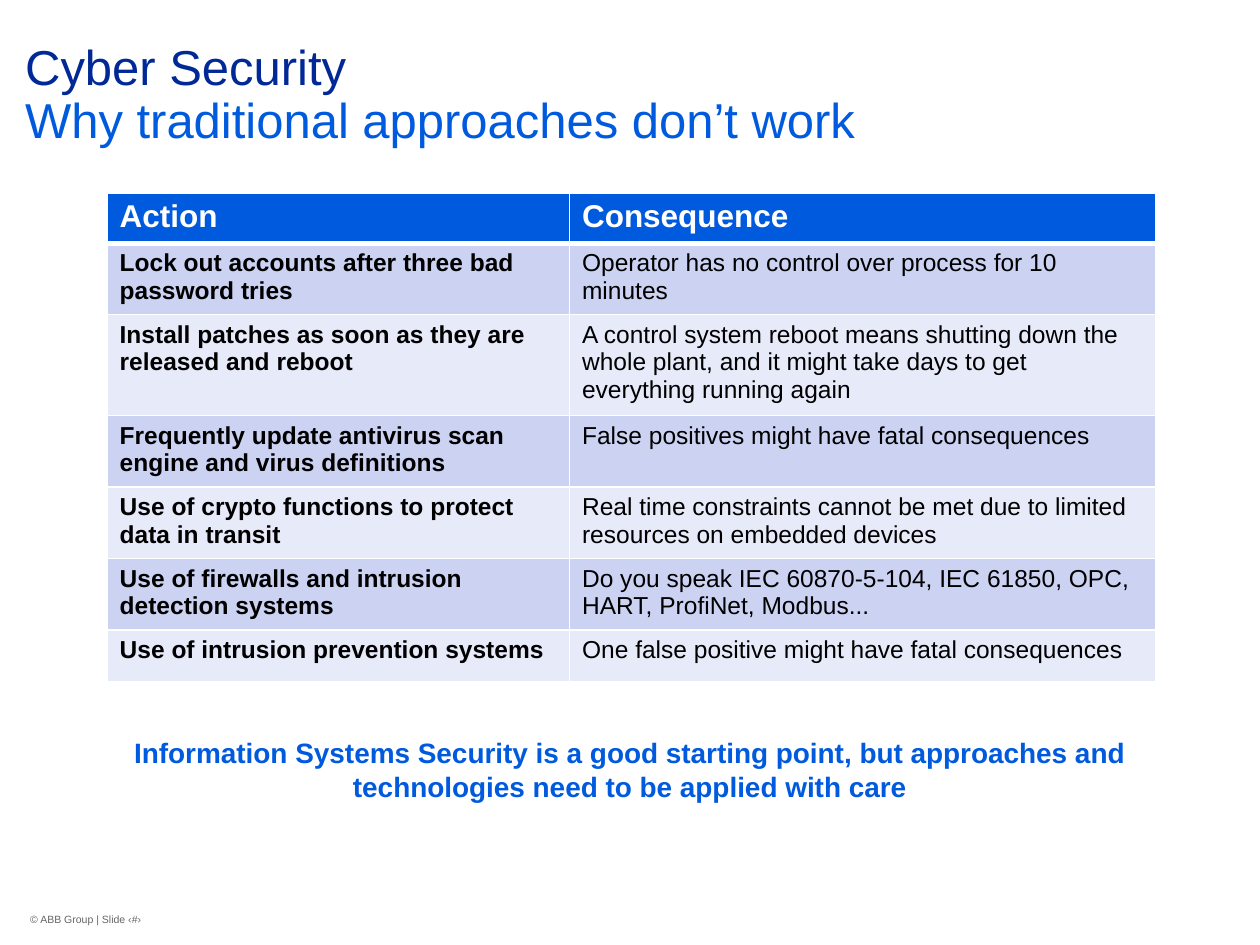
from dataclasses import dataclass

from lxml.etree import SubElement
from pptx import Presentation
from pptx.dml.color import RGBColor
from pptx.enum.text import MSO_ANCHOR, PP_ALIGN
from pptx.oxml.ns import qn
from pptx.util import Inches, Pt


@dataclass(frozen=True)
class Theme:
    font: str = "Arial"
    navy: str = "002897"
    blue: str = "005ADE"
    gray: str = "666666"
    black: str = "000000"
    white: str = "FFFFFF"
    bands: tuple = ("CCD2F2", "E7EAF9")
    title_size: int = 28
    header_size: int = 18
    message_size: int = 16
    cell_size: int = 14
    footer_size: int = 6


THEME = Theme()

HEADER = ("Action", "Consequence")
ROWS = [
    ("Lock out accounts after three bad password tries",
     "Operator has no control over process for 10 minutes"),
    ("Install patches as soon as they are released and reboot",
     "A control system reboot means shutting down the whole plant, and it might take days to get everything running again"),
    ("Frequently update antivirus scan engine and virus definitions",
     "False positives might have fatal consequences"),
    ("Use of crypto functions to protect data in transit",
     "Real time constraints cannot be met due to limited resources on embedded devices"),
    ("Use of firewalls and intrusion detection systems",
     "Do you speak IEC 60870-5-104, IEC 61850, OPC, HART, ProfiNet, Modbus..."),
    ("Use of intrusion prevention systems",
     "One false positive might have fatal consequences"),
]
COLUMN_WIDTHS = (3.67, 4.65)
ROW_HEIGHTS = (0.39, 0.54, 0.75, 0.54, 0.54, 0.54, 0.41)


def add_run(paragraph, text, size, color, bold=False):
    run = paragraph.add_run()
    run.text = text
    run.font.name = THEME.font
    run.font.size = Pt(size)
    run.font.bold = bold
    run.font.color.rgb = RGBColor.from_string(color)


def set_frame(text_frame, margins, anchor=MSO_ANCHOR.TOP):
    left, top, right, bottom = margins
    text_frame.word_wrap = True
    text_frame.vertical_anchor = anchor
    text_frame.margin_left = Inches(left)
    text_frame.margin_top = Inches(top)
    text_frame.margin_right = Inches(right)
    text_frame.margin_bottom = Inches(bottom)


def set_title(slide):
    title = slide.shapes.title
    title.left, title.top = Inches(0), Inches(0)
    title.width, title.height = Inches(10), Inches(1.39)
    set_frame(title.text_frame, (0.2, 0.34, 0.24, 0))
    paragraph = title.text_frame.paragraphs[0]
    paragraph.alignment = PP_ALIGN.LEFT
    paragraph.line_spacing = 0.9
    add_run(paragraph, "Cyber Security", THEME.title_size, THEME.navy)
    paragraph.add_line_break()
    add_run(paragraph, "Why traditional approaches don’t work", THEME.title_size, THEME.blue)


def add_text(slide, box, margins, anchor):
    shape = slide.shapes.add_textbox(*(Inches(length) for length in box))
    set_frame(shape.text_frame, margins, anchor)
    return shape.text_frame.paragraphs[0]


def set_borders(cell, bottom_width):
    properties = cell._tc.get_or_add_tcPr()
    for side, width in (("L", 1), ("R", 1), ("T", 1), ("B", bottom_width)):
        line = SubElement(properties, qn(f"a:ln{side}"), w=str(Pt(width)))
        fill = SubElement(line, qn("a:solidFill"))
        SubElement(fill, qn("a:srgbClr"), val=THEME.white)


def format_cell(cell, text, size, color, bold, fill, bottom_width=1):
    set_borders(cell, bottom_width)
    cell.fill.solid()
    cell.fill.fore_color.rgb = RGBColor.from_string(fill)
    add_run(cell.text_frame.paragraphs[0], text, size, color, bold)


def add_action_table(slide):
    frame = slide.shapes.add_table(
        len(ROW_HEIGHTS), len(COLUMN_WIDTHS), Inches(0.85), Inches(1.53),
        Inches(sum(COLUMN_WIDTHS)), Inches(sum(ROW_HEIGHTS)))
    table = frame.table
    for column, width in zip(table.columns, COLUMN_WIDTHS):
        column.width = Inches(width)
    for row, height in zip(table.rows, ROW_HEIGHTS):
        row.height = Inches(height)
    for column, text in enumerate(HEADER):
        format_cell(table.cell(0, column), text, THEME.header_size, THEME.white,
                    True, THEME.blue, bottom_width=3)
    for index, texts in enumerate(ROWS):
        for column, text in enumerate(texts):
            format_cell(table.cell(index + 1, column), text, THEME.cell_size,
                        THEME.black, column == 0, THEME.bands[index % 2])


def add_message(slide):
    paragraph = add_text(slide, (0.85, 5.42, 8.3, 1.04), (0, 0.42, 0, 0), MSO_ANCHOR.TOP)
    paragraph.alignment = PP_ALIGN.CENTER
    add_run(paragraph,
            "Information Systems Security is a good starting point, but approaches and technologies need to be applied with care",
            THEME.message_size, THEME.blue, True)


def add_footer(slide):
    paragraph = add_text(slide, (0.24, 6.78, 3.07, 0.72), (0, 0, 0, 0.22), MSO_ANCHOR.BOTTOM)
    paragraph.line_spacing = 0.85
    add_run(paragraph, "© ABB Group | Slide ‹#›", THEME.footer_size, THEME.gray)


def main():
    presentation = Presentation()
    presentation.slide_width = Inches(10)
    presentation.slide_height = Inches(7.5)
    slide = presentation.slides.add_slide(presentation.slide_layouts[5])
    set_title(slide)
    add_footer(slide)
    add_message(slide)
    add_action_table(slide)
    presentation.save("out.pptx")


if __name__ == "__main__":
    main()
